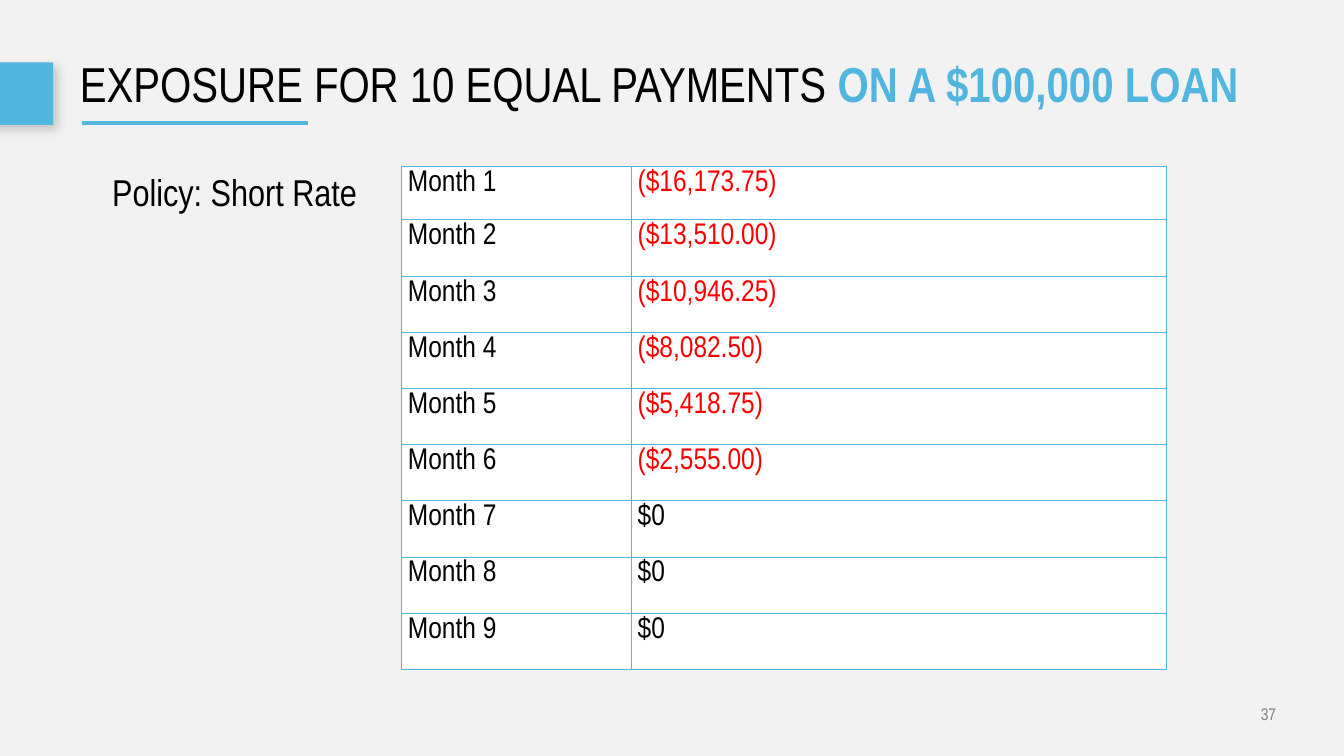
from dataclasses import dataclass

from lxml.etree import SubElement
from pptx import Presentation
from pptx.dml.color import RGBColor
from pptx.enum.shapes import MSO_CONNECTOR, MSO_SHAPE
from pptx.enum.text import MSO_ANCHOR, MSO_AUTO_SIZE, PP_ALIGN
from pptx.oxml import parse_xml
from pptx.oxml.ns import nsdecls, qn
from pptx.util import Inches, Pt


@dataclass(frozen=True)
class Theme:
    font: str = "Arial Narrow"
    background: str = "F2F2F2"
    accent: str = "52B6E0"
    highlight: str = "51B5E0"
    text: str = "000000"
    negative: str = "FF0000"
    muted: str = "808084"
    cell: str = "FFFFFF"
    title_size: float = 52.5
    label_size: float = 40
    table_size: float = 32
    number_size: float = 18


class SlideBuilder:
    def __init__(self, slide, theme):
        self.slide = slide
        self.theme = theme

    def style_run(self, run, size, color, bold=False):
        run.font.name = self.theme.font
        run.font.size = Pt(size)
        run.font.bold = bold
        run.font.color.rgb = RGBColor.from_string(color)

    def rectangle(self, left, top, width, height, color):
        shape = self.slide.shapes.add_shape(
            MSO_SHAPE.RECTANGLE, Inches(left), Inches(top), Inches(width), Inches(height)
        )
        shape.shadow.inherit = False
        shape.fill.solid()
        shape.fill.fore_color.rgb = RGBColor.from_string(color)
        shape.line.fill.background()
        return shape

    def drop_shadow(self, shape, blur, distance, angle, opacity):
        effects = shape._element.spPr.find(qn("a:effectLst"))
        effects.append(parse_xml(
            f'<a:outerShdw {nsdecls("a")} blurRad="{Pt(blur)}" dist="{Pt(distance)}" '
            f'dir="{angle * 60000}" algn="tl" rotWithShape="0"><a:srgbClr val="{self.theme.text}">'
            f'<a:alpha val="{opacity * 1000}"/></a:srgbClr></a:outerShdw>'
        ))

    def rule(self, left, right, top, weight):
        line = self.slide.shapes.add_connector(
            MSO_CONNECTOR.STRAIGHT, Inches(left), Inches(top), Inches(right), Inches(top)
        )
        line.line.color.rgb = RGBColor.from_string(self.theme.accent)
        line.line.width = Pt(weight)
        SubElement(line._element.spPr, qn("a:effectLst"))

    def text(self, left, top, width, height, parts, size, align=PP_ALIGN.LEFT, inset=True, spacing=None):
        box = self.slide.shapes.add_textbox(Inches(left), Inches(top), Inches(width), Inches(height))
        frame = box.text_frame
        frame.word_wrap = True
        if inset:
            frame.auto_size = MSO_AUTO_SIZE.SHAPE_TO_FIT_TEXT
        else:
            frame.vertical_anchor = MSO_ANCHOR.MIDDLE
            frame.margin_left = frame.margin_right = frame.margin_top = frame.margin_bottom = 0
        paragraph = frame.paragraphs[0]
        paragraph.alignment = align
        paragraph.line_spacing = spacing
        for words, color, bold in parts:
            run = paragraph.add_run()
            run.text = words
            self.style_run(run, size, color, bold)

    def cell_borders(self, cell):
        properties = cell._tc.get_or_add_tcPr()
        for position, side in enumerate(("lnL", "lnR", "lnT", "lnB")):
            properties.insert(position, parse_xml(
                f'<a:{side} {nsdecls("a")} w="{Pt(1)}"><a:solidFill>'
                f'<a:srgbClr val="{self.theme.highlight}"/></a:solidFill></a:{side}>'
            ))

    def table(self, left, top, column_widths, row_heights, rows):
        frame = self.slide.shapes.add_table(
            len(rows), len(column_widths), Inches(left), Inches(top),
            Inches(sum(column_widths)), Inches(sum(row_heights)),
        )
        table = frame.table
        table.first_row = table.horz_banding = False
        for column, width in zip(table.columns, column_widths):
            column.width = Inches(width)
        for row, height, values in zip(table.rows, row_heights, rows):
            row.height = Inches(height)
            for cell, value in zip(row.cells, values):
                cell.margin_top = cell.margin_bottom = Inches(0.05)
                cell.fill.solid()
                cell.fill.fore_color.rgb = RGBColor.from_string(self.theme.cell)
                cell.text_frame.text = value
                color = self.theme.negative if value.startswith("(") else self.theme.text
                self.style_run(cell.text_frame.paragraphs[0].runs[0], self.theme.table_size, color)
                self.cell_borders(cell)


def main():
    presentation = Presentation()
    presentation.slide_width = Inches(20)
    presentation.slide_height = Inches(11.25)
    theme = Theme()
    builder = SlideBuilder(presentation.slides.add_slide(presentation.slide_layouts[6]), theme)

    builder.rectangle(0, 0, 20, 11.25, theme.background)
    tab = builder.rectangle(-0.51, 0.93, 1.3, 0.93, theme.accent)
    builder.drop_shadow(tab, blur=12, distance=7, angle=45, opacity=20)
    builder.rule(1.22, 4.59, 1.83, 5)

    title = [
        ("EXPOSURE FOR 10 EQUAL PAYMENTS ", theme.text, False),
        ("ON A $100,000 LOAN", theme.highlight, True),
    ]
    builder.text(1.19, 0.59, 17.8, 1.41, title, theme.title_size, inset=False, spacing=0.9)
    builder.text(14.49, 10.43, 4.5, 0.38, [("37", theme.muted, False)], theme.number_size,
                 align=PP_ALIGN.RIGHT, inset=False)

    exposures = ["($16,173.75)", "($13,510.00)", "($10,946.25)", "($8,082.50)",
                 "($5,418.75)", "($2,555.00)", "$0", "$0", "$0"]
    rows = [(f"Month {month}", exposure) for month, exposure in enumerate(exposures, 1)]
    first_height = 0.8
    other_height = (7.49 - first_height) / (len(rows) - 1)
    row_heights = [first_height] + [other_height] * (len(rows) - 1)
    builder.table(5.97, 2.47, [3.42, 7.97], row_heights, rows)
    builder.text(1.57, 2.47, 3.92, 0.77, [("Policy: Short Rate", theme.text, False)], theme.label_size)

    presentation.save("out.pptx")


if __name__ == "__main__":
    main()
